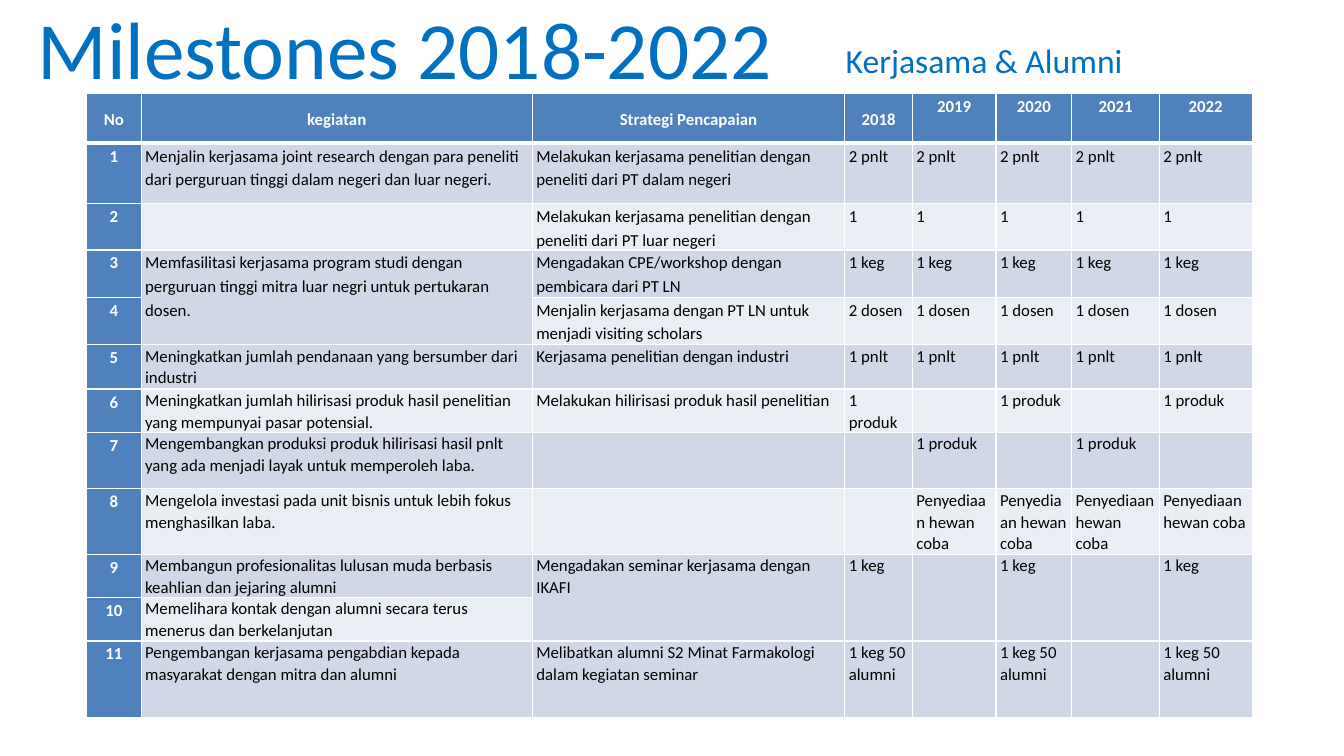
from dataclasses import dataclass

from lxml import etree
from pptx import Presentation
from pptx.dml.color import RGBColor
from pptx.enum import text as t
from pptx.oxml import ns
from pptx.util import Inches, Pt


@dataclass(frozen=True)
class Theme:
    font: str = "Calibri"
    blue: str = "0070C0"
    head: str = "4F81BD"
    odd: str = "D0D8E8"
    even: str = "E9EDF4"
    ink: str = "000000"
    white: str = "FFFFFF"
    title: int = 58
    sub: int = 24
    body: int = 12
    thin: int = 1
    thick: int = 3
    loose: float = 1.15
    tight: float = 1.07


THEME = Theme()
LEFT, MID = t.PP_ALIGN.LEFT, t.PP_ALIGN.CENTER
TOP, CENTRE = t.MSO_ANCHOR.TOP, t.MSO_ANCHOR.MIDDLE

COLS = [0.54, 3.88, 3.1, 0.67, 0.83, 0.75, 0.87, 0.92]
ROWS = [0.49, 0.6, 0.46, 0.47, 0.47, 0.44, 0.43, 0.56, 0.65, 0.43, 0.43, 0.76]
HEAD = ["No", "kegiatan", "Strategi Pencapaian",
        "2018", "2019", "2020", "2021", "2022"]
LOOSE_ROWS = 4  # leading body rows with wider line spacing
MID_HEADS = 4   # leading header cells anchored in the middle
ANIMALS = "Penyediaan hewan coba"

# Activity, strategy, then the target of each year
PLANS = [
    ["Menjalin kerjasama joint research dengan para peneliti dari "
     "perguruan tinggi dalam negeri dan luar negeri.",
     "Melakukan kerjasama penelitian dengan peneliti dari PT dalam negeri",
     *["2 pnlt"] * 5],
    ["",
     "Melakukan kerjasama penelitian dengan peneliti dari PT luar negeri",
     *["1"] * 5],
    ["Memfasilitasi kerjasama program studi dengan perguruan tinggi mitra "
     "luar negri untuk pertukaran dosen.",
     "Mengadakan CPE/workshop dengan pembicara dari PT LN",
     *["1 keg"] * 5],
    ["",
     "Menjalin kerjasama dengan PT LN untuk menjadi visiting scholars",
     "2 dosen", *["1 dosen"] * 4],
    ["Meningkatkan jumlah pendanaan yang bersumber dari industri",
     "Kerjasama penelitian dengan industri",
     *["1 pnlt"] * 5],
    ["Meningkatkan jumlah hilirisasi produk hasil penelitian yang mempunyai "
     "pasar potensial.",
     "Melakukan hilirisasi produk hasil penelitian",
     "1 produk", "", "1 produk", "", "1 produk"],
    ["Mengembangkan produksi produk hilirisasi hasil pnlt yang ada menjadi "
     "layak untuk memperoleh laba.",
     "", "", "1 produk", "", "1 produk", ""],
    ["Mengelola investasi pada unit bisnis untuk lebih fokus menghasilkan "
     "laba.",
     "", "", *[ANIMALS] * 4],
    ["Membangun profesionalitas lulusan muda berbasis keahlian dan jejaring "
     "alumni",
     "Mengadakan seminar kerjasama dengan IKAFI",
     "1 keg", "", "1 keg", "", "1 keg"],
    ["Memelihara kontak dengan alumni secara terus menerus dan berkelanjutan",
     *[""] * 6],
    ["Pengembangan kerjasama pengabdian kepada masyarakat dengan mitra dan "
     "alumni",
     "Melibatkan alumni S2 Minat Farmakologi dalam kegiatan seminar",
     "1 keg 50 alumni", "", "1 keg 50 alumni", "", "1 keg 50 alumni"],
]
# Upper row and column of each cell that spans two rows
MERGES = [(3, 1)] + [(9, col) for col in range(2, len(COLS))]


def write(frame, words, size=THEME.body, color=THEME.ink, bold=False,
          align=LEFT, lines=1.0):
    para = frame.paragraphs[0]
    para.alignment = align
    para.line_spacing = lines
    para.font.size = Pt(size)
    if words:
        run = para.add_run()
        run.text = words
        font = run.font
        font.name, font.size, font.bold = THEME.font, Pt(size), bold
        font.color.rgb = RGBColor.from_string(color)


def label(slide, box, words, anchor=TOP, **style):
    frame = slide.shapes.add_textbox(*map(Inches, box)).text_frame
    frame.word_wrap = True
    frame.vertical_anchor = anchor
    write(frame, words, color=THEME.blue, **style)


def edge(cell, base):
    """Draw white borders; base is the width of the bottom one in points."""
    props = cell._tc.get_or_add_tcPr()
    for side in "LRTB":
        width = base if side == "B" else THEME.thin
        line = etree.SubElement(props, ns.qn(f"a:ln{side}"), w=str(Pt(width)))
        fill = etree.SubElement(line, ns.qn("a:solidFill"))
        etree.SubElement(fill, ns.qn("a:srgbClr"), val=THEME.white)


def fill_cell(cell, words, fill, anchor=TOP, base=THEME.thin, **style):
    cell.margin_left = cell.margin_right = Inches(0.04)
    cell.margin_top = cell.margin_bottom = 0
    cell.vertical_anchor = anchor
    edge(cell, base)
    cell.fill.solid()
    cell.fill.fore_color.rgb = RGBColor.from_string(fill)
    write(cell.text_frame, words, **style)


def plan_table(slide, left, top):
    size = map(Inches, (left, top, sum(COLS), sum(ROWS)))
    grid = slide.shapes.add_table(len(ROWS), len(COLS), *size).table
    for col, width in zip(grid.columns, COLS):
        col.width = Inches(width)
    for row, height in zip(grid.rows, ROWS):
        row.height = Inches(height)

    strong = dict(fill=THEME.head, color=THEME.white, bold=True,
                  align=MID, lines=THEME.loose)
    for col, words in enumerate(HEAD):
        fill_cell(grid.cell(0, col), words, base=THEME.thick,
                  anchor=CENTRE if col < MID_HEADS else TOP, **strong)
    for row, plan in enumerate(PLANS, 1):
        fill_cell(grid.cell(row, 0), str(row), **strong)
        shade = THEME.odd if row % 2 else THEME.even
        lines = THEME.loose if row <= LOOSE_ROWS else THEME.tight
        for col, words in enumerate(plan, 1):
            fill_cell(grid.cell(row, col), words, shade, lines=lines)
    for row, col in MERGES:
        grid.cell(row, col).merge(grid.cell(row + 1, col))


def main():
    deck = Presentation()
    deck.slide_width, deck.slide_height = Inches(13.33), Inches(7.5)
    slide = deck.slides.add_slide(deck.slide_layouts[6])
    label(slide, (0.06, 0, 7.91, 0.93), "Milestones 2018-2022",
          anchor=CENTRE, size=THEME.title, align=MID)
    plan_table(slide, 0.86, 0.93)
    label(slide, (8.29, 0.35, 3.46, 0.5), "Kerjasama & Alumni",
          size=THEME.sub)
    deck.save("out.pptx")


if __name__ == "__main__":
    main()
